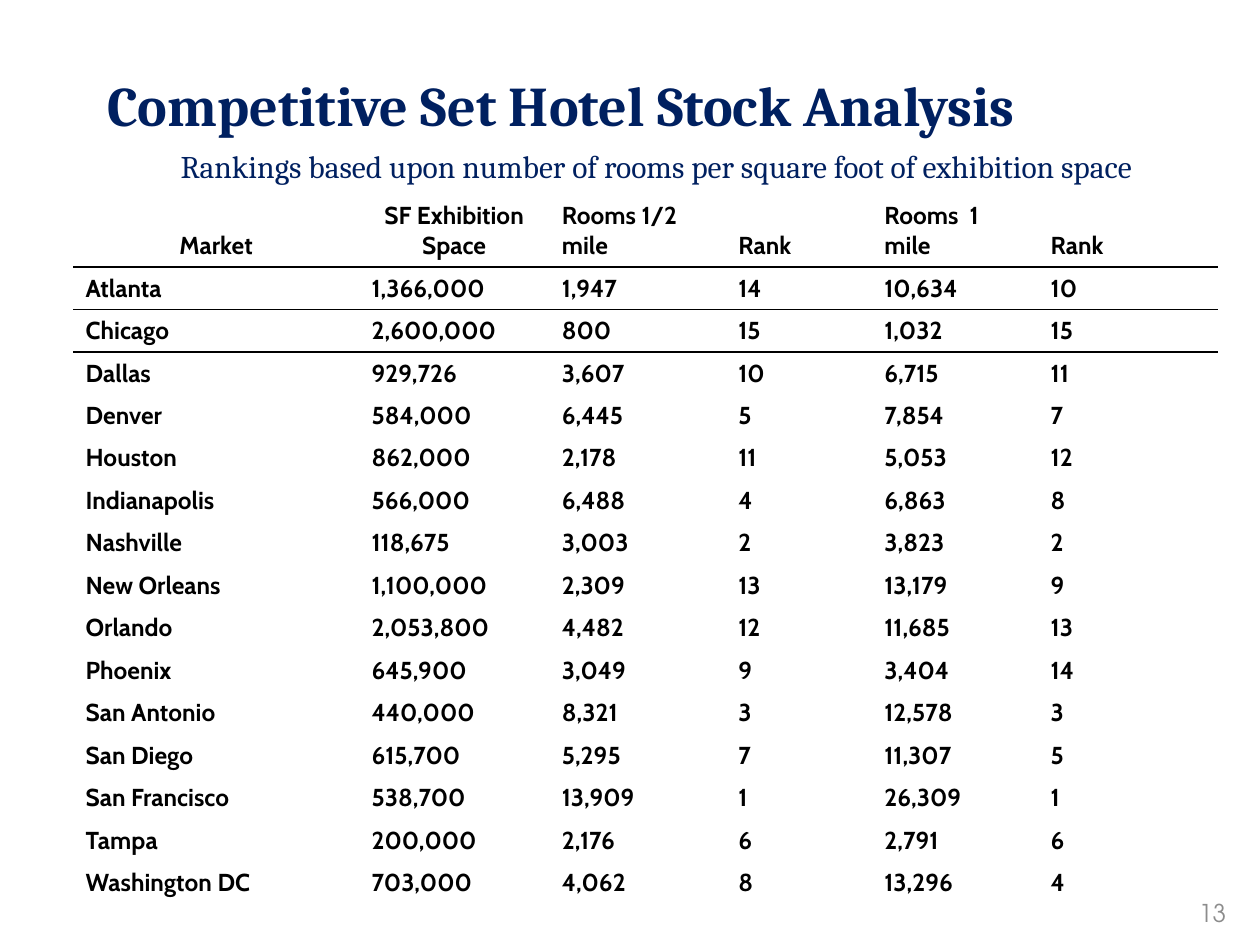
from lxml import etree
from pptx import Presentation, util as u
from pptx.dml.color import RGBColor
from pptx.enum import text
from pptx.oxml.ns import qn

HEAD = ["Market", "SF Exhibition Space", "Rooms 1/2 mile", "Rank",
        "Rooms  1 mile", "Rank"]
ROWS = [
    ["Atlanta", "1,366,000", "1,947", "14", "10,634", "10"],
    ["Chicago", "2,600,000", "800", "15", "1,032", "15"],
    ["Dallas", "929,726", "3,607", "10", "6,715", "11"],
    ["Denver", "584,000", "6,445", "5", "7,854", "7"],
    ["Houston", "862,000", "2,178", "11", "5,053", "12"],
    ["Indianapolis", "566,000", "6,488", "4", "6,863", "8"],
    ["Nashville", "118,675", "3,003", "2", "3,823", "2"],
    ["New Orleans", "1,100,000", "2,309", "13", "13,179", "9"],
    ["Orlando", "2,053,800", "4,482", "12", "11,685", "13"],
    ["Phoenix", "645,900", "3,049", "9", "3,404", "14"],
    ["San Antonio", "440,000", "8,321", "3", "12,578", "3"],
    ["San Diego", "615,700", "5,295", "7", "11,307", "5"],
    ["San Francisco", "538,700", "13,909", "1", "26,309", "1"],
    ["Tampa", "200,000", "2,176", "6", "2,791", "6"],
    ["Washington DC", "703,000", "4,062", "8", "13,296", "4"],
]
WIDTHS = [2.27, 1.51, 1.4, 1.16, 1.32, 1.43]
PLAIN = "{2D5ABB26-0587-4C30-8999-92F81FD0307C}"  # no style, no grid
LEFT, MID, RIGHT = (text.PP_ALIGN.LEFT, text.PP_ALIGN.CENTER,
                    text.PP_ALIGN.RIGHT)
TOP, CENTRE, BASE = (text.MSO_ANCHOR.TOP, text.MSO_ANCHOR.MIDDLE,
                     text.MSO_ANCHOR.BOTTOM)


def paint(color, code):
    color.rgb = RGBColor.from_string(code)


def write(frame, words, align, code, **style):
    frame.text = words
    para = frame.paragraphs[0]
    para.alignment = align
    font = para.runs[0].font
    for name, value in style.items():
        setattr(font, name, value)
    paint(font.color, code)


def place(shape, box):
    for name, value in zip(("left", "top", "width", "height"), box):
        setattr(shape, name, u.Inches(value))


def label(slide, box, anchor, words, align, code, **style):
    shape = slide.shapes.add_textbox(0, 0, 0, 0)
    place(shape, box)
    frame = shape.text_frame
    frame.word_wrap = True
    frame.vertical_anchor = anchor
    write(frame, words, align, code, **style)


def title(slide, box):
    shape = slide.shapes.title
    place(shape, box)
    shape.text_frame.vertical_anchor = CENTRE
    write(shape.text_frame, "Competitive Set Hotel Stock Analysis", LEFT,
          "002060", name="Cambria", size=u.Pt(32), bold=True)


def rule(cell, side):
    props = cell._tc.get_or_add_tcPr()
    line = etree.Element(qn("a:" + side), w=str(u.Pt(1)))
    fill = etree.SubElement(line, qn("a:solidFill"))
    etree.SubElement(fill, qn("a:srgbClr"), val="000000")
    # Borders come before the fill
    props.insert(len(props.findall(qn("a:lnT"))), line)


def market(slide, box):
    left, top, width, height = map(u.Inches, box)
    frame = slide.shapes.add_table(len(ROWS) + 1, len(HEAD),
                                   left, top, width, height)
    table = frame.table
    table.first_row = table.horz_banding = False
    table._tbl.tblPr.find(qn("a:tableStyleId")).text = PLAIN
    for col, size in zip(table.columns, WIDTHS):
        col.width = u.Inches(size)
    for r, row in enumerate([HEAD] + ROWS):
        table.rows[r].height = u.Inches(0.29 if r else 0.62)
        for c, words in enumerate(row):
            cell = table.cell(r, c)
            cell.fill.background()
            cell.vertical_anchor = {0: BASE, 1: CENTRE}.get(r, TOP)
            write(cell.text_frame, words, MID if r == 0 and c < 2 else LEFT,
                  "000000", name="Cabin", size=u.Pt(14), bold=True)
            # Lines above and below the first market
            if r in (1, 2):
                rule(cell, "lnT")
            if r in (0, 1):
                rule(cell, "lnB")


def main():
    deck = Presentation()
    deck.slide_width, deck.slide_height = u.Inches(10), u.Inches(7.5)
    slide = deck.slides.add_slide(deck.slide_layouts[5])
    # Heading
    title(slide, (0.75, 0.51, 8.92, 0.64))
    # Table
    market(slide, (0.58, 1.5, 9.08, 5.62))
    # Subtitle
    label(slide, (0.92, 1.12, 8.58, 0.4), TOP,
          "Rankings based upon number of rooms per square foot of "
          "exhibition space", MID, "002060", name="Cambria", size=u.Pt(18))
    # Page number
    label(slide, (9.08, 7.08, 0.75, 0.33), CENTRE, "13", RIGHT, "8C8C8C",
          name="TeX Gyre Adventor", size=u.Pt(14))
    deck.save("out.pptx")


if __name__ == "__main__":
    main()
